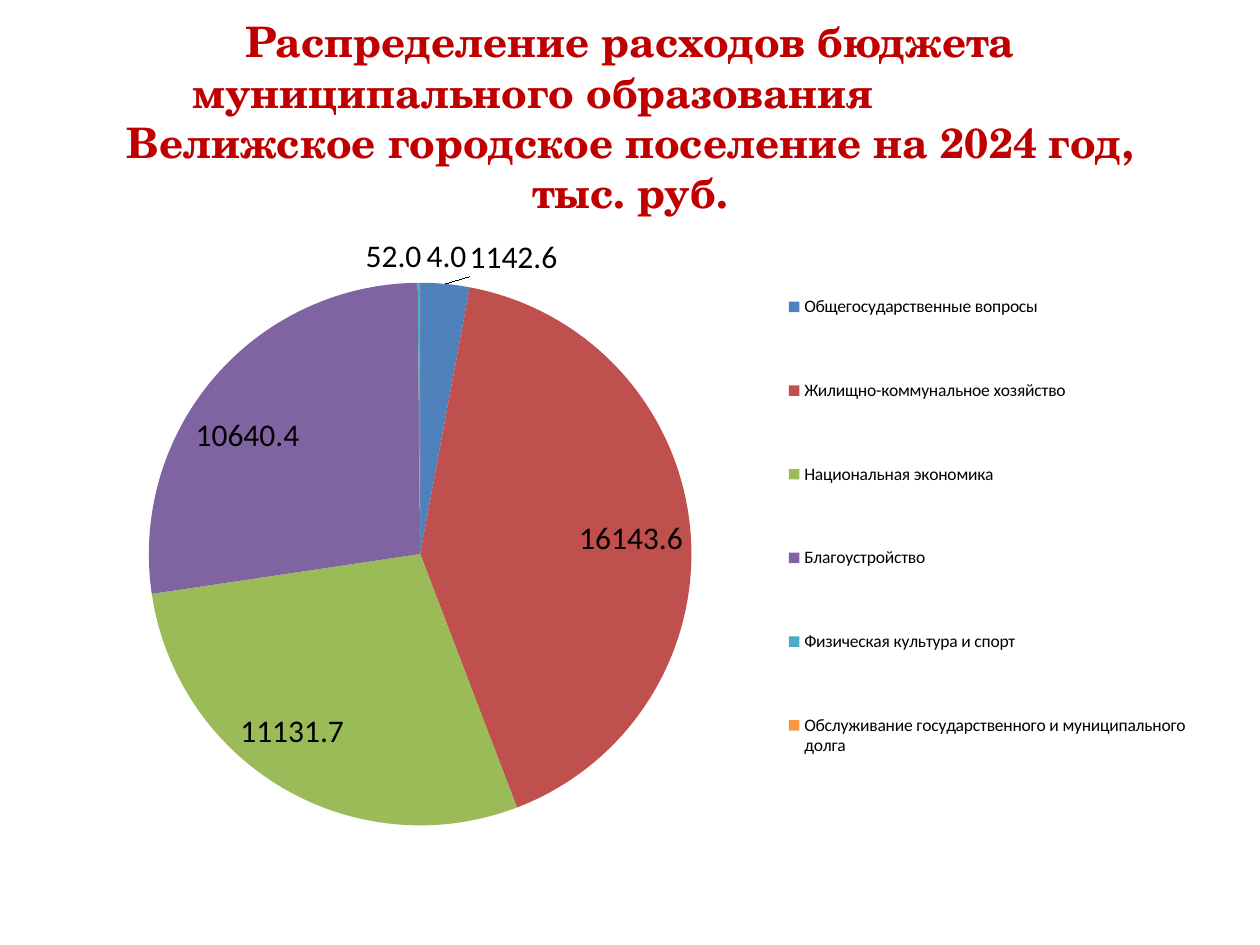
"""Build a slide with a pie chart of municipal budget spending."""
from dataclasses import dataclass

from lxml import etree
from pptx import Presentation
from pptx.chart.data import CategoryChartData
from pptx.dml.color import RGBColor
from pptx.enum import chart as ch, text
from pptx.oxml import ns
from pptx.util import Inches, Pt


@dataclass(frozen=True)
class Theme:
    """Colours, fonts and type sizes of the slide."""
    title_font: str = "TeX Gyre Schola"
    title_size: int = 24
    title_color: str = "C00000"
    chart_font: str = "Calibri"
    label_size: int = 18
    legend_size: int = 10
    text_color: str = "000000"
    slices: tuple = ("4F81BD", "C0504D", "9BBB59", "8064A2", "4BACC6", "F79646")


THEME = Theme()
CHART_WIDTH, CHART_HEIGHT = 9, 4.95
TITLE = (
    ("Распределение расходов бюджета", 0),
    ("муниципального образования", 1.54),
    ("Велижское городское поселение на 2024 год, тыс. руб.", 0),
)
SPENDING = {
    "Общегосударственные вопросы": 1142.6,
    "Жилищно-коммунальное хозяйство": 16143.6,
    "Национальная экономика": 11131.7,
    "Благоустройство": 10640.4,
    "Физическая культура и спорт": 52,
    "Обслуживание государственного и муниципального долга": 4,
}
INSIDE = ch.XL_LABEL_POSITION.INSIDE_END
OUTSIDE = ch.XL_LABEL_POSITION.OUTSIDE_END
LABELS = (
    (OUTSIDE, 0.19, 0),
    (INSIDE, 0, -0.09),
    (INSIDE, -0.37, -0.25),
    (INSIDE, -0.19, 0.27),
    (OUTSIDE, -0.2, 0),
    (OUTSIDE, 0.21, 0),
)


def style_font(font, name, size, color):
    """Set the face, size and colour of a font."""
    font.name = name
    font.size = Pt(size)
    font.color.rgb = RGBColor.from_string(color)


def add_title(s):
    """Add the centred heading, one paragraph per forced line."""
    tf = s.shapes.add_textbox(Inches(0.5), Inches(0.3), Inches(9), Inches(1.25)).text_frame
    tf.word_wrap = True
    tf.vertical_anchor = text.MSO_ANCHOR.MIDDLE
    for i, (line, right_margin) in enumerate(TITLE):
        p = tf.add_paragraph() if i else tf.paragraphs[0]
        p.text = line
        p.alignment = text.PP_ALIGN.CENTER
        p.font.bold = True
        style_font(p.font, THEME.title_font, THEME.title_size, THEME.title_color)
        p._p.get_or_add_pPr().set("marR", str(Inches(right_margin)))


def make_layout(**values):
    """Return a manual chart layout holding the given settings."""
    layout = etree.Element(ns.qn("c:layout"))
    manual = etree.SubElement(layout, ns.qn("c:manualLayout"))
    for tag, value in values.items():
        etree.SubElement(manual, ns.qn(f"c:{tag}")).set("val", str(value))
    return layout


def place(parent, index, **values):
    """Give a chart part a manual layout at the given child position."""
    for old in parent.findall(ns.qn("c:layout")):
        parent.remove(old)
    parent.insert(index, make_layout(**values))


def add_labels(series):
    """Show values inside large slices and outside small ones."""
    labels = series.data_labels
    labels.show_value = True
    labels.number_format = "0.0"
    labels.number_format_is_linked = False
    labels.position = INSIDE
    for i, (position, dx, dy) in enumerate(LABELS):
        series.points[i].data_label.position = position
        label = series._element.xpath(f"c:dLbls/c:dLbl[c:idx/@val='{i}']")[0]
        place(label, 1, x=dx / CHART_WIDTH, y=dy / CHART_HEIGHT)


def add_legend(chart):
    """Add the widely spaced legend at the right."""
    chart.has_legend = True
    legend = chart.legend
    legend.position = ch.XL_LEGEND_POSITION.RIGHT
    legend.include_in_layout = False
    style_font(legend.font, THEME.chart_font, THEME.legend_size, THEME.text_color)
    place(legend._element, 1, xMode="edge", yMode="edge", x=0.63, y=0.02, w=0.37, h=0.94)


def add_pie(s):
    """Add the pie chart of spending."""
    data = CategoryChartData(number_format="0.0")
    data.categories = list(SPENDING)
    data.add_series("Series 1", list(SPENDING.values()))
    chart = s.shapes.add_chart(ch.XL_CHART_TYPE.PIE, Inches(0.5), Inches(1.75),
                               Inches(CHART_WIDTH), Inches(CHART_HEIGHT), data).chart
    chart.has_title = False
    style_font(chart.font, THEME.chart_font, THEME.label_size, THEME.text_color)
    plot = chart.plots[0]
    plot.vary_by_categories = True
    series = plot.series[0]
    for i, color in enumerate(THEME.slices):
        fill = series.points[i].format.fill
        fill.solid()
        fill.fore_color.rgb = RGBColor.from_string(color)
    add_labels(series)
    add_legend(chart)
    area = chart._chartSpace.xpath("c:chart/c:plotArea")[0]
    place(area, 0, layoutTarget="inner", xMode="edge", yMode="edge",
          x=0.07, y=0.1, w=0.49, h=0.87)


def main():
    """Build and save the slide."""
    prs = Presentation()
    prs.slide_width, prs.slide_height = Inches(10), Inches(7.5)
    s = prs.slides.add_slide(prs.slide_layouts[6])
    add_title(s)
    add_pie(s)
    prs.save("out.pptx")


if __name__ == "__main__":
    main()
